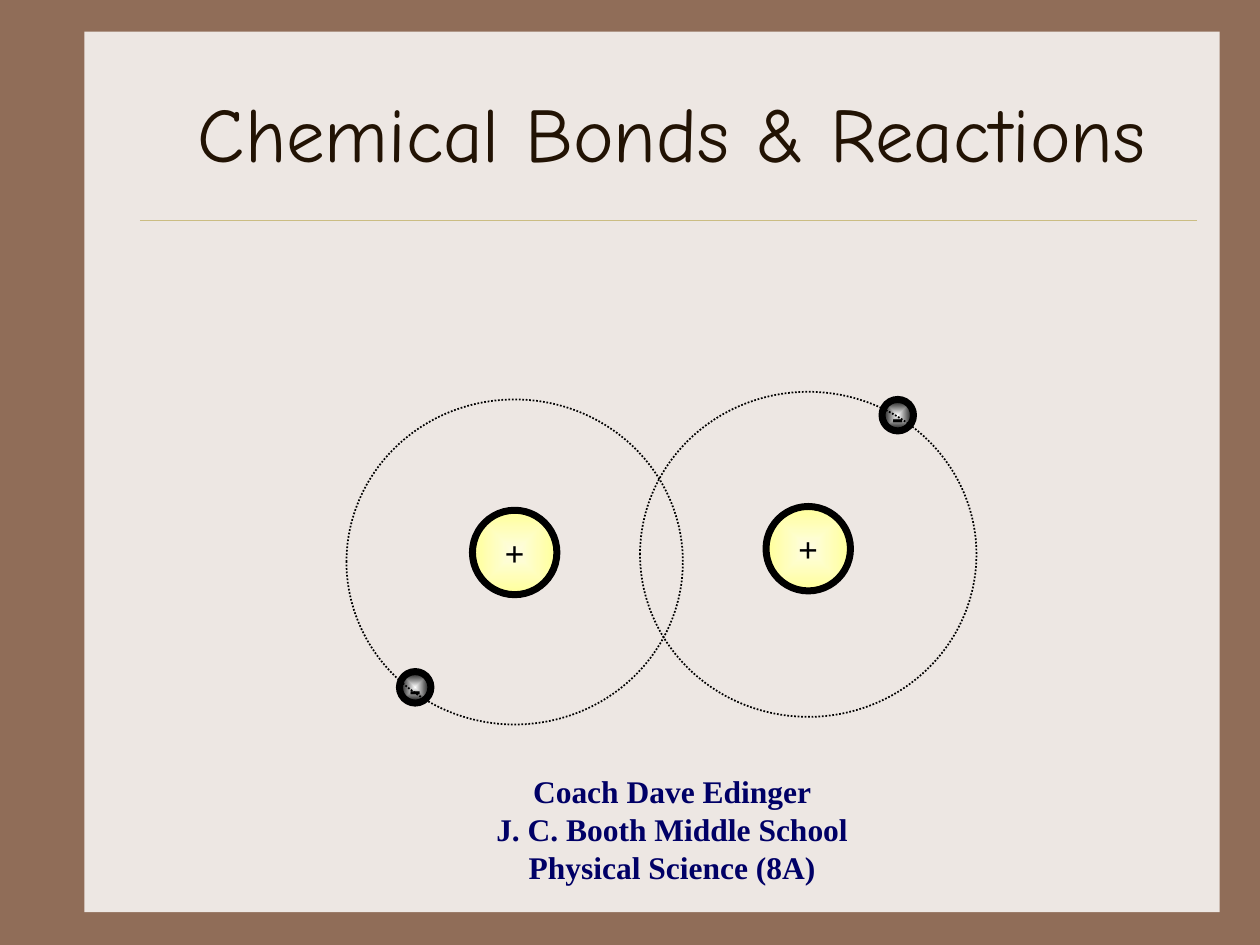
from lxml.etree import SubElement
from pptx import Presentation
from pptx.dml.color import RGBColor
from pptx.enum.dml import MSO_LINE
from pptx.enum.shapes import MSO_CONNECTOR, MSO_SHAPE
from pptx.enum.text import MSO_ANCHOR, MSO_AUTO_SIZE, PP_ALIGN
from pptx.oxml.ns import qn
from pptx.util import Inches, Pt

BROWN = RGBColor(0x90, 0x6D, 0x58)
CREAM = RGBColor(0xED, 0xE7, 0xE3)
GOLD = RGBColor(0xCB, 0xBD, 0x83)
DARK_BROWN = RGBColor(0x22, 0x13, 0x04)
NAVY = RGBColor(0x00, 0x00, 0x66)
BLACK = RGBColor(0x00, 0x00, 0x00)
WHITE = RGBColor(0xFF, 0xFF, 0xFF)
PALE_YELLOW = RGBColor(0xFE, 0xFD, 0xE3)
YELLOW = RGBColor(0xFF, 0xFF, 0x99)


def write_text(frame, text, size, color, font="Times New Roman", bold=True,
               anchor=MSO_ANCHOR.MIDDLE, wrap=True):
    frame.word_wrap = wrap
    frame.vertical_anchor = anchor
    frame.text = text
    for para in frame.paragraphs:
        para.alignment = PP_ALIGN.CENTER
        for span in para.runs:
            span.font.name = font
            span.font.size = Pt(size)
            span.font.bold = bold
            span.font.color.rgb = color


def add_particle(page, sign, left, top, size, center_color, edge_color):
    particle = page.shapes.add_shape(
        MSO_SHAPE.OVAL, Inches(left), Inches(top), Inches(size), Inches(size))
    particle.shadow.inherit = False
    particle.line.color.rgb = BLACK
    particle.line.width = Pt(4)
    particle.fill.gradient()
    for stop, color in zip(particle.fill.gradient_stops, (center_color, edge_color)):
        stop.color.rgb = color
    gradient = particle.element.spPr.find(qn("a:gradFill"))
    gradient.remove(gradient.find(qn("a:lin")))
    radial = SubElement(gradient, qn("a:path"), path="shape")
    SubElement(radial, qn("a:fillToRect"), l="50000", t="50000", r="50000", b="50000")
    write_text(particle.text_frame, sign, 20, BLACK, wrap=False)


deck = Presentation()
deck.slide_width = Inches(10)
deck.slide_height = Inches(7.5)
page = deck.slides.add_slide(deck.slide_layouts[5])
page.background.fill.solid()
page.background.fill.fore_color.rgb = BROWN

panel = page.shapes.add_shape(
    MSO_SHAPE.RECTANGLE, Inches(0.67), Inches(0.25), Inches(9.01), Inches(6.99))
panel.shadow.inherit = False
panel.fill.solid()
panel.fill.fore_color.rgb = CREAM
panel.line.fill.background()

rule = page.shapes.add_connector(
    MSO_CONNECTOR.STRAIGHT, Inches(1.11), Inches(1.75), Inches(9.5), Inches(1.75))
rule.line.color.rgb = GOLD
rule.line.width = Pt(0.25)
SubElement(rule.element.spPr, qn("a:effectLst"))

title = page.shapes.title
title.left, title.top = Inches(1.17), Inches(0.42)
title.width, title.height = Inches(8.33), Inches(1.25)
write_text(title.text_frame, "Chemical Bonds & Reactions", 44, DARK_BROWN,
           font="Comic Neue", bold=False)
title.element.getparent().append(title.element)

atoms = [
    {"nucleus": (3.75, 4.05), "electron": (3.17, 5.33), "orbit": (2.75, 3.17)},
    {"nucleus": (6.08, 4.02), "electron": (7, 3.17), "orbit": (5.08, 3.11)},
]
for atom in atoms:
    add_particle(page, "+", *atom["nucleus"], 0.67, PALE_YELLOW, YELLOW)
    add_particle(page, "-", *atom["electron"], 0.25, WHITE, BLACK)
    left, top = atom["orbit"]
    orbit = page.shapes.add_shape(
        MSO_SHAPE.OVAL, Inches(left), Inches(top), Inches(2.67), Inches(2.58))
    orbit.shadow.inherit = False
    orbit.fill.background()
    orbit.line.color.rgb = BLACK
    orbit.line.width = Pt(1)
    orbit.line.dash_style = MSO_LINE.ROUND_DOT

credit_lines = ["Coach Dave Edinger", "J. C. Booth Middle School", "Physical Science (8A)"]
credit_box = page.shapes.add_textbox(
    Inches(2.75), Inches(6.08), Inches(5.17), Inches(1.01))
write_text(credit_box.text_frame, "\n".join(credit_lines), 18, NAVY, anchor=MSO_ANCHOR.TOP)
credit_box.text_frame.auto_size = MSO_AUTO_SIZE.SHAPE_TO_FIT_TEXT

deck.save("out.pptx")
